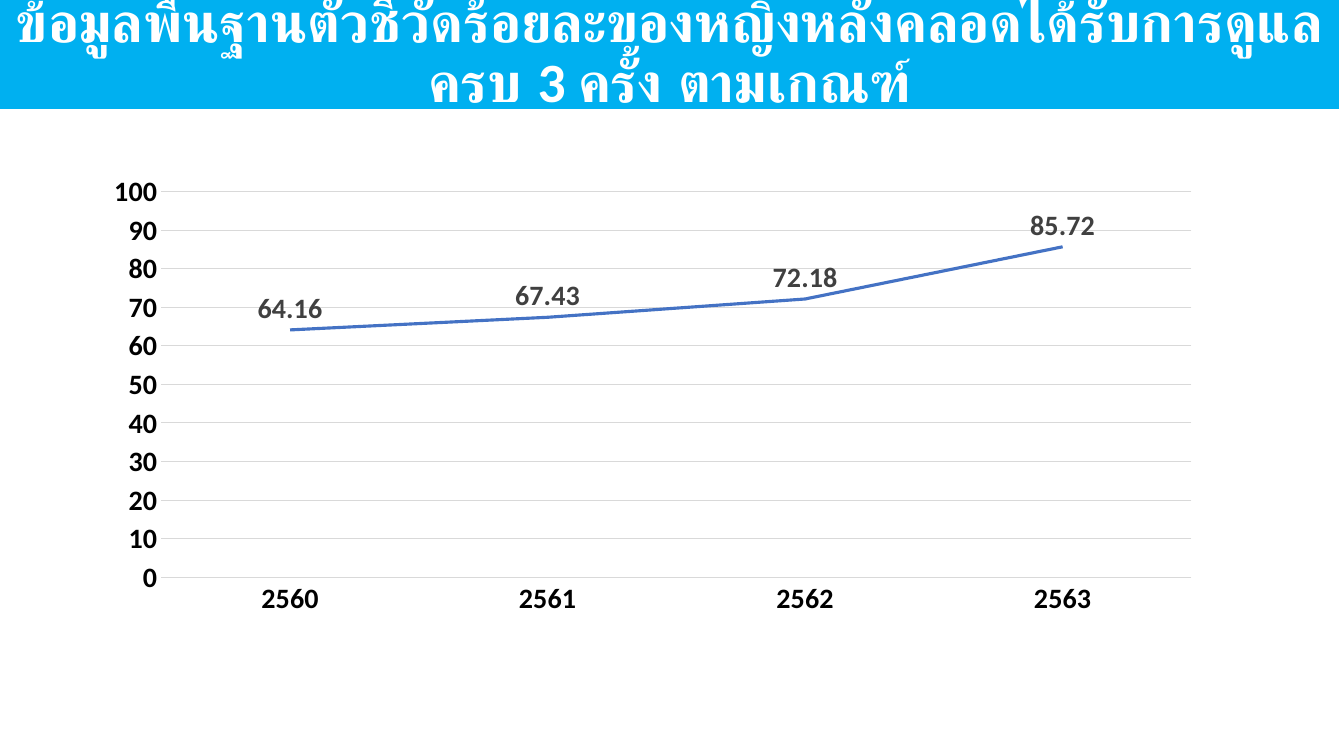
import pptx
import pptx.chart.data
import pptx.dml.color
import pptx.enum.chart
import pptx.enum.text
import pptx.util

Inches = pptx.util.Inches
Pt = pptx.util.Pt
RGBColor = pptx.dml.color.RGBColor
Tick = pptx.enum.chart.XL_TICK_MARK

SKY = RGBColor(0x00, 0xB0, 0xF0)
BLUE = RGBColor(0x44, 0x72, 0xC4)
WHITE = RGBColor(0xFF, 0xFF, 0xFF)
BLACK = RGBColor(0x00, 0x00, 0x00)
DARK = RGBColor(0x40, 0x40, 0x40)
PALE = RGBColor(0xD9, 0xD9, 0xD9)

FONT = "Calibri"
TITLE = "ข้อมูลพื้นฐานตัวชี้วัดร้อยละของหญิงหลังคลอดได้รับการดูแลครบ 3 ครั้ง ตามเกณฑ์"
RATES = {"2560": 64.16, "2561": 67.43, "2562": 72.18, "2563": 85.72}


def apply(item, form):
    for name, value in form.items():
        setattr(item, name, value)


def set_font(font, size, color, bold=True):
    apply(font, {"name": FONT, "size": Pt(size), "bold": bold})
    font.color.rgb = color


def set_line(line, color, width):
    line.color.rgb = color
    line.width = Pt(width)


def add_title(slide, text):
    title = slide.shapes.title
    apply(title, {"left": Inches(0), "top": Inches(0),
                  "width": Inches(13.28), "height": Inches(1.08)})
    title.fill.solid()
    title.fill.fore_color.rgb = SKY
    frame = title.text_frame
    apply(frame, {"text": text, "word_wrap": True,
                  "auto_size": pptx.enum.text.MSO_AUTO_SIZE.NONE,
                  "vertical_anchor": pptx.enum.text.MSO_ANCHOR.MIDDLE})
    para = frame.paragraphs[0]
    apply(para, {"alignment": pptx.enum.text.PP_ALIGN.CENTER,
                 "line_spacing": 0.9})
    set_font(para.runs[0].font, 39.6, WHITE)


def set_axis(axis, form):
    apply(axis, {"major_tick_mark": Tick.NONE, "minor_tick_mark": Tick.NONE})
    apply(axis, form)
    set_font(axis.tick_labels.font, 20, BLACK)


def add_trend(slide, rates):
    data = pptx.chart.data.CategoryChartData()
    data.categories = list(rates)
    data.add_series("Series 1", list(rates.values()))
    chart = slide.shapes.add_chart(
        pptx.enum.chart.XL_CHART_TYPE.LINE, Inches(0.91), Inches(1.64),
        Inches(11.13), Inches(4.56), data).chart
    apply(chart, {"has_title": False, "has_legend": False})
    set_font(chart.font, 20, BLACK, False)

    # Axes and grid
    years, scale = chart.category_axis, chart.value_axis
    set_axis(years, {"has_major_gridlines": False})
    set_line(years.format.line, PALE, 0.75)
    set_axis(scale, {"has_major_gridlines": True, "minimum_scale": 0,
                     "maximum_scale": 100, "major_unit": 10})
    scale.format.line.fill.background()
    set_line(scale.major_gridlines.format.line, PALE, 0.75)

    # Line and its value labels
    plot = chart.plots[0]
    plot.vary_by_categories = False
    series = plot.series[0]
    series.smooth = False
    series.marker.style = pptx.enum.chart.XL_MARKER_STYLE.NONE
    set_line(series.format.line, BLUE, 2.25)
    labels = series.data_labels
    apply(labels, {"show_value": True,
                   "position": pptx.enum.chart.XL_LABEL_POSITION.ABOVE})
    set_font(labels.font, 20, DARK)


def main():
    deck = pptx.Presentation()
    apply(deck, {"slide_width": Inches(13.33), "slide_height": Inches(7.5)})
    slide = deck.slides.add_slide(deck.slide_layouts.get_by_name("Title Only"))
    add_title(slide, TITLE)
    add_trend(slide, RATES)
    deck.save("out.pptx")


if __name__ == "__main__":
    main()
